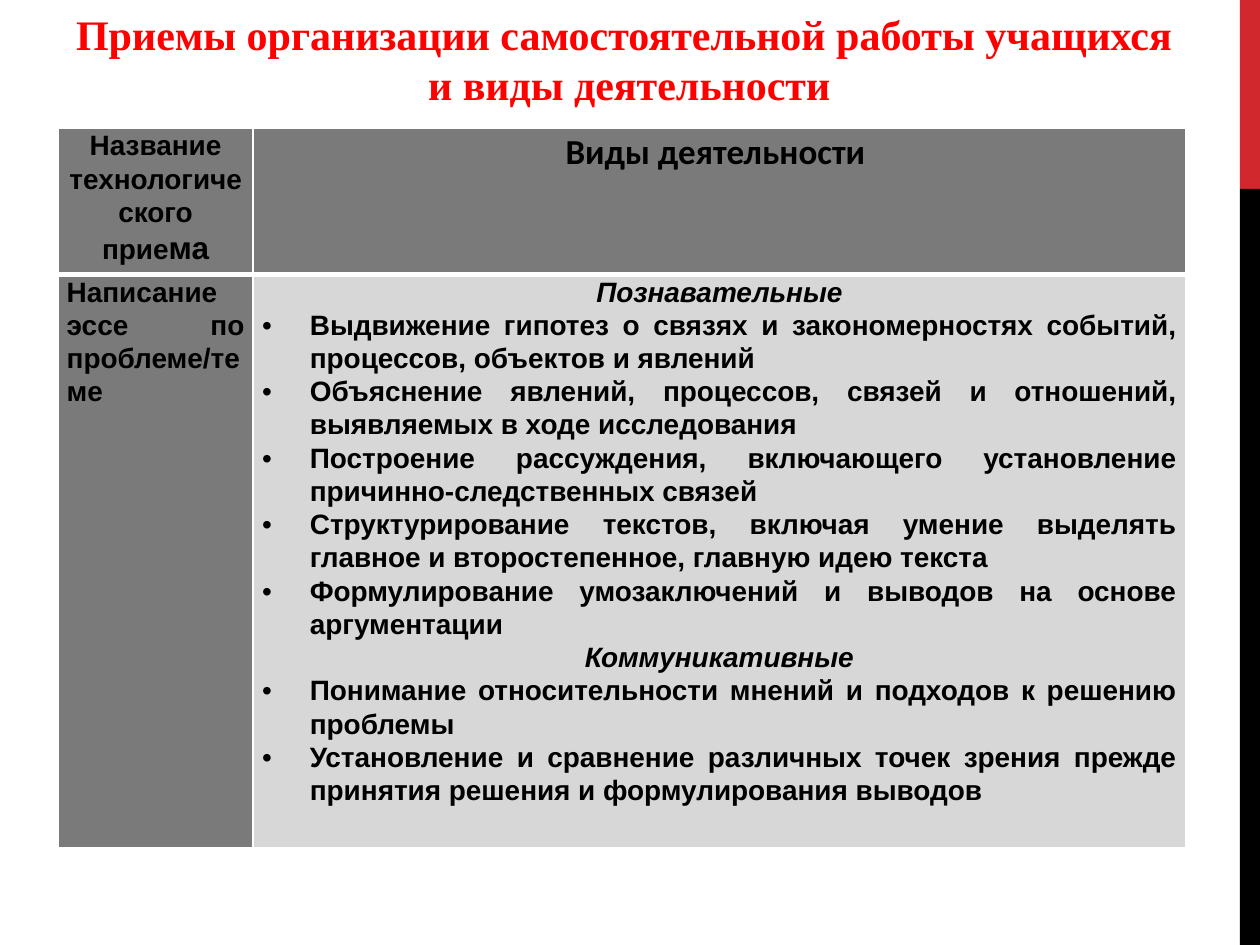
import pptx
import pptx.util
import pptx.dml.color
import pptx.enum.shapes
import pptx.enum.text
import pptx.oxml
import pptx.oxml.ns
from dataclasses import dataclass

Inches, Pt = pptx.util.Inches, pptx.util.Pt
RGB = pptx.dml.color.RGBColor.from_string
ALIGN = pptx.enum.text.PP_ALIGN


@dataclass(frozen=True)
class Theme:
    accent: str = "D1282E"
    black: str = "000000"
    white: str = "FFFFFF"
    title: str = "FF0000"
    dark: str = "7A7A7A"
    light: str = "D7D7D7"
    body_font: str = "Arial"
    head_font: str = "Calibri"
    title_font: str = "Times New Roman"
    body_size: int = 16
    large_size: int = 18
    head_size: int = 20
    title_size: int = 24


THEME = Theme()
TITLE = ["Приемы организации самостоятельной работы учащихся ", "и виды деятельности"]
ACTIVITIES = {
    "Познавательные": [
        "Выдвижение гипотез о связях и закономерностях событий, процессов, объектов и явлений",
        "Объяснение явлений, процессов, связей и отношений, выявляемых в ходе исследования",
        "Построение рассуждения, включающего установление причинно-следственных связей",
        "Структурирование текстов, включая умение выделять главное и второстепенное, "
        "главную идею текста",
        "Формулирование умозаключений и выводов на основе аргументации",
    ],
    "Коммуникативные": [
        "Понимание относительности мнений и подходов к решению проблемы",
        "Установление и сравнение различных точек зрения прежде принятия решения "
        "и формулирования выводов",
    ],
}


def add_bar(slide, top, height, color):
    sp = slide.shapes.add_shape(pptx.enum.shapes.MSO_SHAPE.RECTANGLE,
                                Inches(9.84), Inches(top), Inches(0.16), Inches(height))
    sp.shadow.inherit = False
    sp.fill.solid()
    sp.fill.fore_color.rgb = RGB(color)
    sp.line.fill.background()


def write(tf, text, align, font=THEME.body_font, size=THEME.body_size,
          color=THEME.black, spacing=1.07):
    """Fill the first paragraph if it is still empty, else append one."""
    p = tf.paragraphs[-1]
    if p.runs:
        p = tf.add_paragraph()
    p.alignment = align
    p.line_spacing = spacing
    p.font.name, p.font.size, p.font.bold = font, Pt(size), True
    p.font.color.rgb = RGB(color)
    p.add_run().text = text
    return p


def add_bullet(p):
    pPr = p._p.get_or_add_pPr()
    pPr.set("marL", str(Inches(0.38)))
    pPr.set("indent", str(-Inches(0.38)))
    ns = pptx.oxml.ns.nsdecls("a")
    marks = [f'<a:buFont {ns} typeface="{THEME.body_font}"/>', f'<a:buChar {ns} char="•"/>']
    # Bullet marks come before the default run properties
    for mark in marks:
        pPr.find(pptx.oxml.ns.qn("a:defRPr")).addprevious(pptx.oxml.parse_xml(mark))


def style_cell(cell, fill, top=1, bottom=1):
    cell.margin_left = cell.margin_right = Inches(0.07)
    cell.margin_top = cell.margin_bottom = 0
    tcPr = cell._tc.get_or_add_tcPr()
    for side, width in (("L", 1), ("R", 1), ("T", top), ("B", bottom)):
        tcPr.append(pptx.oxml.parse_xml(
            f'<a:ln{side} {pptx.oxml.ns.nsdecls("a")} w="{Pt(width)}"><a:solidFill>'
            f'<a:srgbClr val="{THEME.white}"/></a:solidFill></a:ln{side}>'))
    cell.fill.solid()
    cell.fill.fore_color.rgb = RGB(fill)


def add_activity_table(slide):
    table = slide.shapes.add_table(2, 2, Inches(0.46), Inches(1.02),
                                   Inches(8.95), Inches(5.71)).table
    for column, width in zip(table.columns, (1.55, 7.4)):
        column.width = Inches(width)
    for row, height in zip(table.rows, (1.16, 4.55)):
        row.height = Inches(height)

    # Fills and rules
    for col in range(2):
        style_cell(table.cell(0, col), THEME.dark, bottom=3)
        style_cell(table.cell(1, col), (THEME.dark, THEME.light)[col], top=3)

    # Header row
    p = write(table.cell(0, 0).text_frame, "Название технологического прие", ALIGN.CENTER)
    r = p.add_run()
    r.text = "ма"
    r.font.size = Pt(THEME.large_size)
    write(table.cell(0, 1).text_frame, "Виды деятельности ", ALIGN.CENTER,
          THEME.head_font, THEME.head_size)

    # Technique and its activities
    write(table.cell(1, 0).text_frame, "Написание эссе по проблеме/теме", ALIGN.JUSTIFY)
    tf = table.cell(1, 1).text_frame
    for group, items in ACTIVITIES.items():
        write(tf, group, ALIGN.CENTER).font.italic = True
        for item in items:
            add_bullet(write(tf, item, ALIGN.JUSTIFY))

    # Runs carry the paragraph font inside table cells
    for cell in table.iter_cells():
        apply_fonts(cell.text_frame)


def apply_fonts(tf):
    for p in tf.paragraphs:
        for r in p.runs:
            r.font.name, r.font.bold, r.font.italic = p.font.name, p.font.bold, p.font.italic
            r.font.size = r.font.size or p.font.size
            r.font.color.rgb = p.font.color.rgb


def add_title(slide):
    tf = slide.shapes.add_textbox(Inches(0.46), Inches(0.01),
                                  Inches(9.07), Inches(0.91)).text_frame
    tf.word_wrap = False
    tf.vertical_anchor = pptx.enum.text.MSO_ANCHOR.MIDDLE
    for line in TITLE:
        write(tf, line, ALIGN.CENTER, THEME.title_font, THEME.title_size, THEME.title, 1.0)
    apply_fonts(tf)


def main():
    prs = pptx.Presentation()
    prs.slide_width, prs.slide_height = Inches(10), Inches(7.5)
    slide = prs.slides.add_slide(prs.slide_layouts[6])
    # Side stripe
    add_bar(slide, 0, 1.5, THEME.accent)
    add_bar(slide, 1.5, 6, THEME.black)
    add_activity_table(slide)
    add_title(slide)
    prs.save("out.pptx")


if __name__ == "__main__":
    main()
